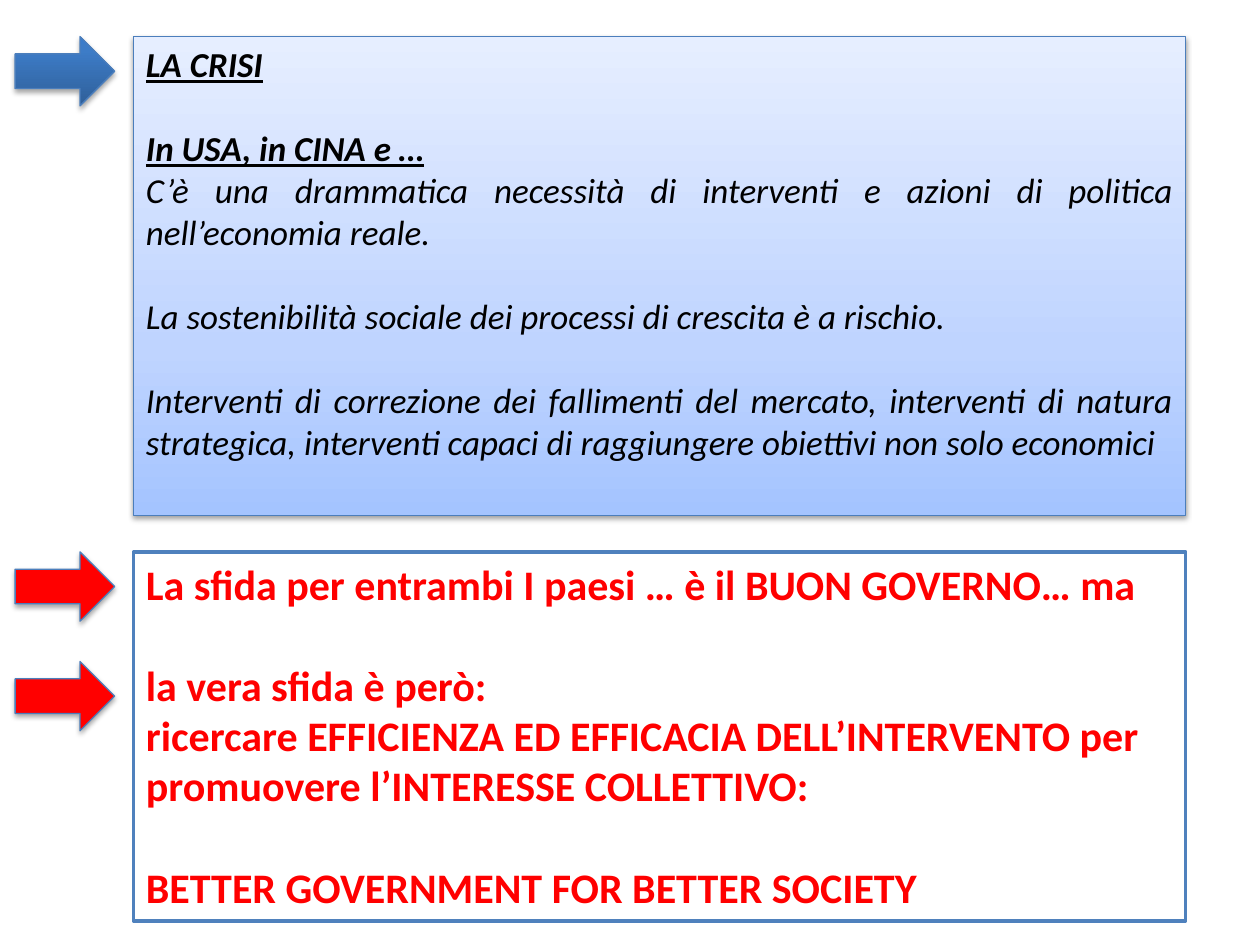
from lxml.etree import SubElement
from pptx import Presentation
from pptx.dml.color import RGBColor
from pptx.enum.shapes import MSO_SHAPE as Shape
from pptx.enum.text import MSO_ANCHOR as Anchor, PP_ALIGN as Align
from pptx.oxml.ns import qn
from pptx.util import Inches, Pt

COLORS = {
    "text": "000000", "alert": "FF0000", "paper": "FFFFFF",
    "edge": "4B7EBC", "frame": "4F81BD", "shadow": "000000",
}
# Gradient stops run from the bottom edge to the top: (percent, colour).
SKY = [(0, "A4C4FF"), (35, "BFD4FF"), (100, "E6EEFF")]
STEEL = [(0, "2F5F99"), (80, "3D7CC7"), (100, "3A7CCB")]

BOX_LEFT, BOX_WIDTH = 1.06, 8.35
ARROW_LEFT, ARROW_WIDTH, ARROW_HEIGHT = 0.12, 0.79, 0.55
CRISIS_TOP, CHALLENGE_TOP, SECOND_ARROW_TOP = 0.29, 4.38, 5.25

CRISIS_FONT = {"name": "Calibri", "size": Pt(20), "italic": True}
HEADING_FONT = CRISIS_FONT | {"bold": True, "underline": True}
CHALLENGE_FONT = {"name": "Calibri", "size": Pt(24), "bold": True}

# Each paragraph: (text, font, whether a gap comes before it).
CRISIS = [
    ("LA CRISI", HEADING_FONT, False),
    ("In USA, in CINA e …", HEADING_FONT, True),
    ("C’è una drammatica necessità di interventi e azioni di politica "
     "nell’economia reale.", CRISIS_FONT, False),
    ("La sostenibilità sociale dei processi di crescita è a rischio.",
     CRISIS_FONT, True),
    ("Interventi di correzione dei fallimenti del mercato, interventi di "
     "natura strategica, interventi capaci di raggiungere obiettivi non solo "
     "economici", CRISIS_FONT, True),
]
CHALLENGE = [
    ("La sfida per entrambi I paesi … è il BUON GOVERNO… ma",
     CHALLENGE_FONT, False),
    ("la vera sfida è però:", CHALLENGE_FONT, True),
    ("ricercare EFFICIENZA ED EFFICACIA DELL’INTERVENTO per promuovere "
     "l’INTERESSE COLLETTIVO:", CHALLENGE_FONT, False),
    ("BETTER GOVERNMENT FOR BETTER SOCIETY", CHALLENGE_FONT, True),
]


def rgb(name):
    return RGBColor.from_string(COLORS[name])


class SlideBuilder:
    """Holds the current page and its common style."""

    def __init__(self, page):
        self.page = page

    def shape(self, kind, bounds, fill, line="edge", weight=0.75):
        """Add a shape filled with a colour name or a list of gradient stops."""
        shape = self.page.shapes.add_shape(kind, *map(Inches, bounds))
        shape.shadow.inherit = False
        if isinstance(fill, str):
            shape.fill.solid()
            shape.fill.fore_color.rgb = rgb(fill)
        else:
            self.gradient(shape, fill)
        shape.line.color.rgb = rgb(line)
        shape.line.width = Pt(weight)
        return shape

    def gradient(self, shape, stops):
        shape.fill.gradient()
        shape.fill.gradient_angle = 90
        stop_list = next(shape.element.iter(qn("a:gsLst")))
        for old_stop in list(stop_list):
            stop_list.remove(old_stop)
        for percent, color in stops:
            stop = SubElement(stop_list, qn("a:gs"), pos=str(percent * 1000))
            SubElement(stop, qn("a:srgbClr"), val=color)

    def shadow(self, shape, opacity, distance):
        """Cast a soft shadow straight down."""
        effects = shape.element.spPr.find(qn("a:effectLst"))
        outer = SubElement(effects, qn("a:outerShdw"), blurRad=str(Pt(3.1)),
                           dist=str(Pt(distance)), dir="5400000",
                           rotWithShape="0")
        color = SubElement(outer, qn("a:srgbClr"), val=COLORS["shadow"])
        SubElement(color, qn("a:alpha"), val=str(opacity * 1000))

    def arrow(self, top, fill):
        bounds = (ARROW_LEFT, top, ARROW_WIDTH, ARROW_HEIGHT)
        arrow = self.shape(Shape.RIGHT_ARROW, bounds, fill)
        self.shadow(arrow, opacity=35, distance=1.8)

    def box(self, top, height, fill, **line_style):
        bounds = (BOX_LEFT, top, BOX_WIDTH, height)
        return self.shape(Shape.RECTANGLE, bounds, fill, **line_style)

    def text(self, box, paragraphs, color, align, gap):
        frame = box.text_frame
        frame.word_wrap = True
        frame.vertical_anchor = Anchor.TOP
        for index, (words, font, spaced) in enumerate(paragraphs):
            para = frame.add_paragraph() if index else frame.paragraphs[0]
            para.alignment = align
            para.space_before = Pt(gap if spaced else 0)
            span = para.add_run()
            span.text = words
            span.font.color.rgb = rgb(color)
            for name, value in font.items():
                setattr(span.font, name, value)


def main():
    deck = Presentation()
    deck.slide_width, deck.slide_height = Inches(10), Inches(7.5)
    builder = SlideBuilder(deck.slides.add_slide(deck.slide_layouts[6]))

    crisis = builder.box(CRISIS_TOP, 3.8, SKY)
    builder.shadow(crisis, opacity=38, distance=1.6)
    builder.text(crisis, CRISIS, "text", Align.JUSTIFY, gap=24)
    builder.arrow(CRISIS_TOP, STEEL)

    challenge = builder.box(CHALLENGE_TOP, 2.93, "paper",
                            line="frame", weight=2)
    builder.text(challenge, CHALLENGE, "alert", Align.LEFT, gap=29)
    for top in (CHALLENGE_TOP, SECOND_ARROW_TOP):
        builder.arrow(top, "alert")

    deck.save("out.pptx")


if __name__ == "__main__":
    main()
